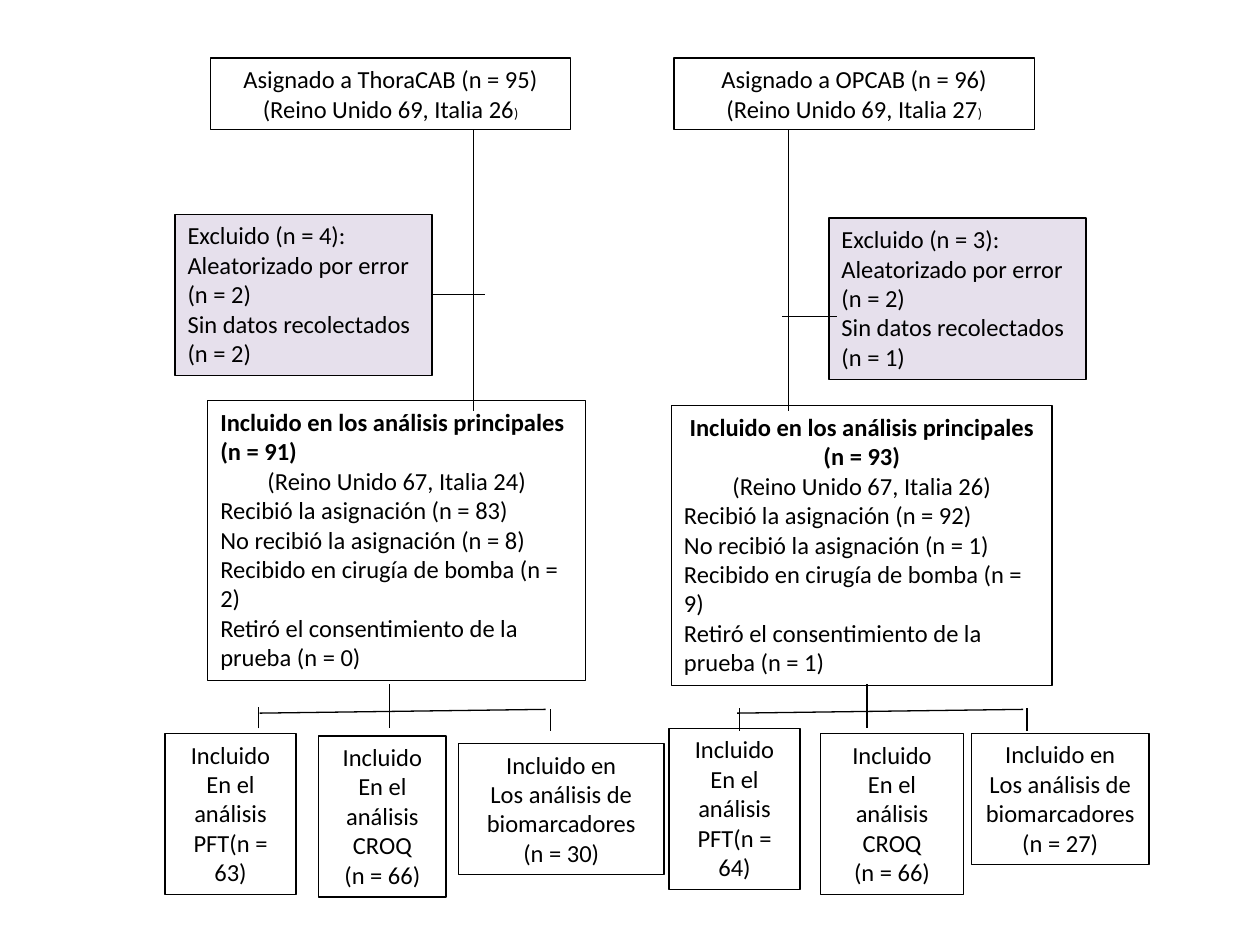
from dataclasses import dataclass

from lxml.etree import SubElement
from pptx import Presentation
from pptx.dml.color import RGBColor
from pptx.enum.shapes import MSO_CONNECTOR, MSO_SHAPE
from pptx.enum.text import MSO_ANCHOR, MSO_AUTO_SIZE, PP_ALIGN
from pptx.oxml.ns import qn
from pptx.util import Pt

PX = 9144  # EMU per px, 100 px to the inch
LEFT, CENTER = PP_ALIGN.LEFT, PP_ALIGN.CENTER


@dataclass
class Theme:
    font: str = "Calibri"
    body: Pt = Pt(14)
    small: Pt = Pt(8)
    line: Pt = Pt(0.75)
    ink: RGBColor = RGBColor(0, 0, 0)
    paper: RGBColor = RGBColor(255, 255, 255)
    excluded: RGBColor = RGBColor(0xE6, 0xE0, 0xEC)


theme = Theme()
prs = Presentation()
prs.slide_width, prs.slide_height = 1000 * PX, 750 * PX
slide = prs.slides.add_slide(prs.slide_layouts[6])


def add_box(at, lines, align=CENTER, fill=theme.paper):
    sp = slide.shapes.add_shape(MSO_SHAPE.RECTANGLE, *[v * PX for v in at])
    sp.shadow.inherit = False
    sp.fill.solid()
    sp.fill.fore_color.rgb = fill
    sp.line.color.rgb = theme.ink
    sp.line.width = theme.line
    tf = sp.text_frame
    tf.word_wrap = True
    tf.auto_size = MSO_AUTO_SIZE.SHAPE_TO_FIT_TEXT
    tf.vertical_anchor = MSO_ANCHOR.TOP
    tf.text = "\n".join(lines)
    for p in tf.paragraphs:
        p.alignment = align
        p.font.name, p.font.size = theme.font, theme.body
        for r in p.runs:
            r.font.name, r.font.size = theme.font, theme.body
            r.font.color.rgb = theme.ink
    return sp


def add_line(x1, y1, x2, y2):
    cx = slide.shapes.add_connector(MSO_CONNECTOR.STRAIGHT, *[v * PX for v in (x1, y1, x2, y2)])
    cx.line.color.rgb = theme.ink
    cx.line.width = theme.line
    SubElement(cx._element.spPr, qn("a:effectLst"))
    return cx


# Assigned patients, with a small closing bracket
for x, name, n, italy in [(167, "ThoraCAB", 95, 26), (535, "OPCAB", 96, 27)]:
    sp = add_box((x, 46, 286, 57),
                 [f"Asignado a {name} (n = {n})", f"(Reino Unido 69, Italia {italy}"])
    r = sp.text_frame.paragraphs[1].add_run()
    r.text = ")"
    r.font.name, r.font.size = theme.font, theme.small
    r.font.color.rgb = theme.ink

# Excluded patients
excluded = []
for x, y, n, no_data in [(139, 170, 4, 2), (658, 173, 3, 1)]:
    excluded.append(add_box(
        (x, y, 204, 128),
        [f"Excluido (n = {n}):", "Aleatorizado por error (n = 2)",
         f"Sin datos recolectados (n = {no_data})"],
        LEFT, theme.excluded))

# Main analyses: bold heading, centred countries, then left-aligned counts
for at, n, italy, got, missed, pump, withdrew, heading in [
    ((165, 318, 300, 222), 91, 24, 83, 8, 2, 0, LEFT),
    ((533, 322, 302, 222), 93, 26, 92, 1, 9, 1, CENTER),
]:
    sp = add_box(at, [
        f"Incluido en los análisis principales (n = {n})",
        f"(Reino Unido 67, Italia {italy})",
        f"Recibió la asignación (n = {got})",
        f"No recibió la asignación (n = {missed})",
        f"Recibido en cirugía de bomba (n = {pump})",
        f"Retiró el consentimiento de la prueba (n = {withdrew})",
    ], LEFT)
    head, countries = sp.text_frame.paragraphs[:2]
    head.alignment = heading
    head.runs[0].font.bold = True
    countries.alignment = CENTER

# Secondary analyses
for pft_at, pft, croq_at, bio_at, bio in [
    ((131, 582, 104, 128), 63, (253, 584, 101, 128), (364, 590, 163, 104), 30),
    ((531, 578, 104, 128), 64, (651, 582, 114, 128), (771, 582, 141, 104), 27),
]:
    add_box(pft_at, ["Incluido", "En el análisis", f"PFT(n = {pft})"])
    add_box(croq_at, ["Incluido", "En el análisis", "CROQ", "(n = 66)"])
    add_box(bio_at, ["Incluido en", "Los análisis de", "biomarcadores", f"(n = {bio})"])

# Trunks from assignment to main analyses
for x in (376, 626):
    add_line(x, 103, x, 326)

# Branches to the excluded boxes
add_line(343, 234, 385, 234).begin_connect(excluded[0], 3)
add_line(621, 251, 664, 251)

# Forks to the secondary analyses: stem, bar and two outer drops
for stem, bar, left, right in [
    (309, 206, (205, 561, 578), (437, 563, 580)),
    (688, 585, (587, 562, 580), (815, 562, 580)),
]:
    add_line(stem, 543, stem, 578)
    add_line(bar, 566, bar + 227, 563)
    for x, top, bottom in (left, right):
        add_line(x, bottom, x, top)

prs.save("out.pptx")
